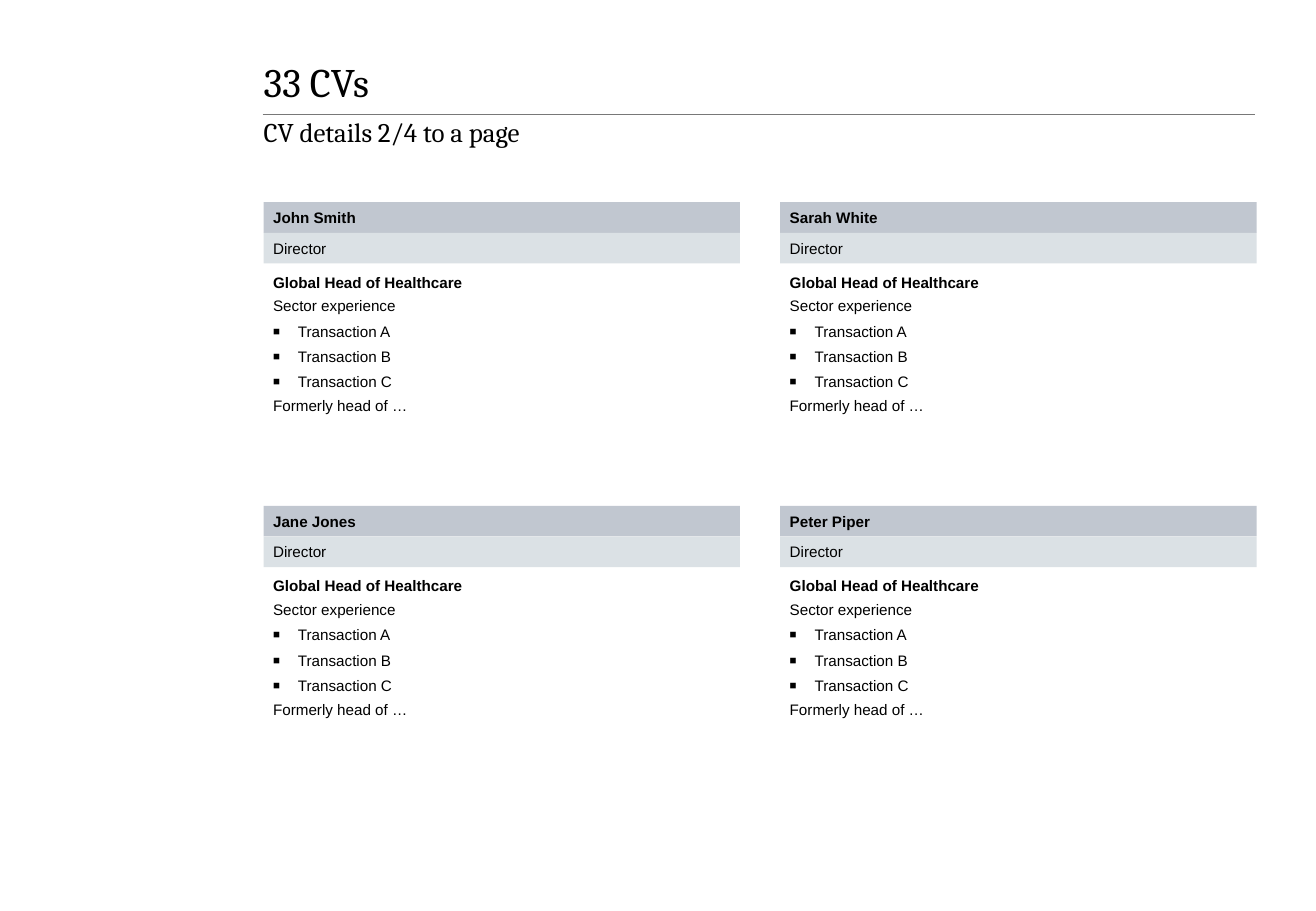
from lxml import etree
from pptx import Presentation
from pptx.dml.color import RGBColor
from pptx.enum.shapes import MSO_CONNECTOR, MSO_SHAPE
from pptx.enum.text import MSO_ANCHOR, MSO_AUTO_SIZE, PP_ALIGN
from pptx.oxml.ns import qn
from pptx.util import Cm, Pt

BLACK = RGBColor(0x00, 0x00, 0x00)
RULE_GREY = RGBColor(0x78, 0x78, 0x78)
NAME_BAND = RGBColor(0xC1, 0xC7, 0xD0)
ROLE_BAND = RGBColor(0xDB, 0xE1, 0xE5)

LEFT, TOP = 5.51, 4.23
COLUMN_PITCH, ROW_PITCH = 10.8, 6.35
CARD_WIDTH, BAND_HEIGHT = 9.96, 0.64

PEOPLE = ["John Smith", "Sarah White", "Jane Jones", "Peter Piper"]
DETAILS = [
    ("Global Head of Healthcare", dict(bold=True)),
    ("Sector experience", dict(before=3.2)),
    ("Transaction A", dict(before=4.2, bullet=True)),
    ("Transaction B", dict(before=4.2, bullet=True)),
    ("Transaction C", dict(before=4.2, bullet=True)),
    ("Formerly head of …", dict(before=3.2)),
]


def write(frame, text, size=9, font="Arial", bold=False, before=0, bullet=False):
    """Fill the frame's empty first paragraph, or add one after it."""
    first = frame.paragraphs[0]
    paragraph = frame.add_paragraph() if first.runs else first
    properties = paragraph._p.get_or_add_pPr()
    properties.set("marL", str(Cm(0.52) if bullet else 0))
    properties.set("indent", str(-Cm(0.52) if bullet else 0))
    if bullet:
        paragraph.level = 1
        etree.SubElement(properties, qn("a:buSzPct"), val="75000")
        etree.SubElement(properties, qn("a:buFont"), typeface="Arial")
        etree.SubElement(properties, qn("a:buChar"), char="■")
    else:
        etree.SubElement(properties, qn("a:buNone"))
    paragraph.alignment = PP_ALIGN.LEFT
    paragraph.space_before = Pt(before)
    run = paragraph.add_run()
    run.text = text
    run.font.size = Pt(size)
    run.font.name = font
    run.font.bold = bold
    run.font.color.rgb = BLACK


def set_frame(frame, anchor, sides, top, bottom, fit=MSO_AUTO_SIZE.NONE):
    frame.word_wrap = True
    frame.auto_size = fit
    frame.vertical_anchor = anchor
    frame.margin_left = frame.margin_right = Cm(sides)
    frame.margin_top, frame.margin_bottom = Cm(top), Cm(bottom)


presentation = Presentation()
presentation.slide_width, presentation.slide_height = Cm(27.51), Cm(19.05)
slide = presentation.slides.add_slide(presentation.slide_layouts[1])
shapes = slide.shapes

# Title and subtitle
headings = [
    (shapes.title, "33 CVs", 24, 1.35, 0.99, MSO_ANCHOR.MIDDLE),
    (slide.placeholders[1], "CV details 2/4 to a page", 16, 2.42, 0.89, MSO_ANCHOR.TOP),
]
for heading, text, size, top, height, anchor in headings:
    heading.left, heading.top = Cm(LEFT), Cm(top)
    heading.width, heading.height = Cm(20.74), Cm(height)
    set_frame(heading.text_frame, anchor, 0, 0, 0.3)
    write(heading.text_frame, text, size=size, font="Cambria")

# Rule under the title
rule = shapes.add_connector(MSO_CONNECTOR.STRAIGHT, Cm(5.49), Cm(2.39), Cm(26.24), Cm(2.39))
rule.line.color.rgb = RULE_GREY
rule.line.width = Pt(0.5)
etree.SubElement(rule._element.spPr, qn("a:effectLst"))

# CV cards, two to a row
for index, person in enumerate(PEOPLE):
    row, column = divmod(index, 2)
    left = Cm(LEFT + column * COLUMN_PITCH)
    top = TOP + row * ROW_PITCH

    bands = [(person, NAME_BAND, True), ("Director", ROLE_BAND, False)]
    for position, (text, colour, bold) in enumerate(bands):
        band = shapes.add_shape(MSO_SHAPE.RECTANGLE, left, Cm(top + position * BAND_HEIGHT),
                                Cm(CARD_WIDTH), Cm(BAND_HEIGHT))
        band.shadow.inherit = False
        band.fill.solid()
        band.fill.fore_color.rgb = colour
        band.line.fill.background()
        set_frame(band.text_frame, MSO_ANCHOR.MIDDLE, 0.2, 0.2, 0.2)
        write(band.text_frame, text, bold=bold)

    details = shapes.add_textbox(left, Cm(top + 2 * BAND_HEIGHT), Cm(CARD_WIDTH), Cm(3.38))
    set_frame(details.text_frame, MSO_ANCHOR.TOP, 0.2, 0.2, 0.2, MSO_AUTO_SIZE.SHAPE_TO_FIT_TEXT)
    for text, formatting in DETAILS:
        write(details.text_frame, text, **formatting)

presentation.save("out.pptx")
